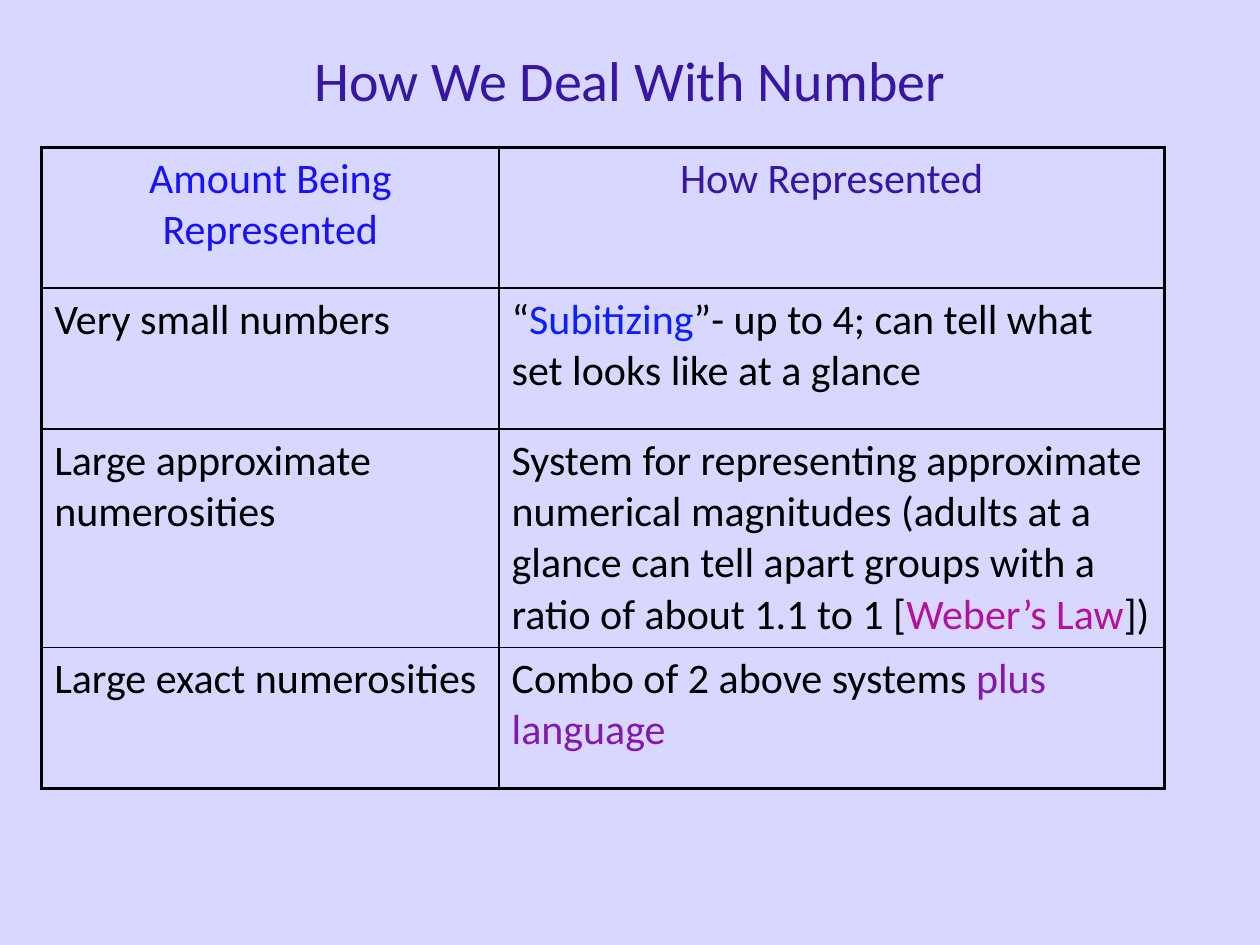
from lxml.etree import SubElement
from pptx import Presentation
from pptx.dml.color import RGBColor
from pptx.enum.text import MSO_ANCHOR, PP_ALIGN
from pptx.oxml.ns import qn
from pptx.util import Cm, Pt

BACKGROUND = RGBColor(0xD7, 0xD7, 0xFF)
INDIGO = RGBColor(0x36, 0x16, 0xA2)
BLUE = RGBColor(0x17, 0x11, 0xFF)
BRIGHT_BLUE = RGBColor(0x0B, 0x1F, 0xFF)
MAGENTA = RGBColor(0xB3, 0x12, 0x9A)
PURPLE = RGBColor(0x84, 0x18, 0xAA)
BLACK = RGBColor(0, 0, 0)

FONT = "Calibri"
THICK, THIN = Pt(2.25), Pt(1)
COL_WIDTHS = [9.22, 13.41]
ROW_HEIGHTS = [2.84, 2.84, 4.4, 2.84]
ROWS = [
    [[("Amount Being Represented", BLUE)], [("How Represented", INDIGO)]],
    [
        [("Very small numbers", BLACK)],
        [
            ("“", BLACK),
            ("Subitizing", BRIGHT_BLUE),
            ("”- up to 4; can tell what set looks like at a glance", BLACK),
        ],
    ],
    [
        [("Large approximate numerosities", BLACK)],
        [
            ("System for representing approximate numerical magnitudes "
             "(adults at a glance can tell apart groups with a ratio of "
             "about 1.1 to 1 [", BLACK),
            ("Weber’s Law", MAGENTA),
            ("])", BLACK),
        ],
    ],
    [
        [("Large exact numerosities", BLACK)],
        [("Combo of 2 above systems ", BLACK), ("plus language", PURPLE)],
    ],
]


def add_runs(p, runs, size):
    for text, color in runs:
        r = p.add_run()
        r.text = text
        r.font.name = FONT
        r.font.size = Pt(size)
        r.font.color.rgb = color


def set_borders(cell, widths):
    tcPr = cell._tc.get_or_add_tcPr()
    for side, width in widths.items():
        ln = SubElement(tcPr, qn(f"a:ln{side}"), w=str(width))
        fill = SubElement(ln, qn("a:solidFill"))
        SubElement(fill, qn("a:srgbClr"), val=str(BLACK))


def add_title(slide, left, top, width, height):
    sp = slide.shapes.title
    sp.left, sp.top, sp.width, sp.height = left, top, width, height
    tf = sp.text_frame
    tf.vertical_anchor = MSO_ANCHOR.MIDDLE
    p = tf.paragraphs[0]
    p.alignment = PP_ALIGN.CENTER
    add_runs(p, [("How We Deal With Number", INDIGO)], 32)


def add_number_table(slide, left, top, width, height):
    n_rows, n_cols = len(ROWS), len(COL_WIDTHS)
    table = slide.shapes.add_table(n_rows, n_cols, left, top, width, height).table
    table.first_row = False
    table.horz_banding = False
    for column, w in zip(table.columns, COL_WIDTHS):
        column.width = Cm(w)
    for row, h in zip(table.rows, ROW_HEIGHTS):
        row.height = Cm(h)
    for i, row in enumerate(ROWS):
        for j, runs in enumerate(row):
            cell = table.cell(i, j)
            set_borders(cell, {
                "L": THICK if j == 0 else THIN,
                "R": THICK if j == n_cols - 1 else THIN,
                "T": THICK if i == 0 else THIN,
                "B": THICK if i == n_rows - 1 else THIN,
            })
            cell.fill.background()
            p = cell.text_frame.paragraphs[0]
            p.alignment = PP_ALIGN.CENTER if i == 0 else PP_ALIGN.LEFT
            add_runs(p, runs, 24)


def main():
    prs = Presentation()
    prs.slide_width, prs.slide_height = Cm(25.4), Cm(19.05)
    slide = prs.slides.add_slide(prs.slide_layouts[5])
    slide.background.fill.solid()
    slide.background.fill.fore_color.rgb = BACKGROUND
    add_title(slide, Cm(1.9), Cm(0), Cm(21.6), Cm(3.18))
    add_number_table(slide, Cm(0.84), Cm(2.97),
                     Cm(sum(COL_WIDTHS)), Cm(sum(ROW_HEIGHTS)))
    prs.save("out.pptx")


if __name__ == "__main__":
    main()
